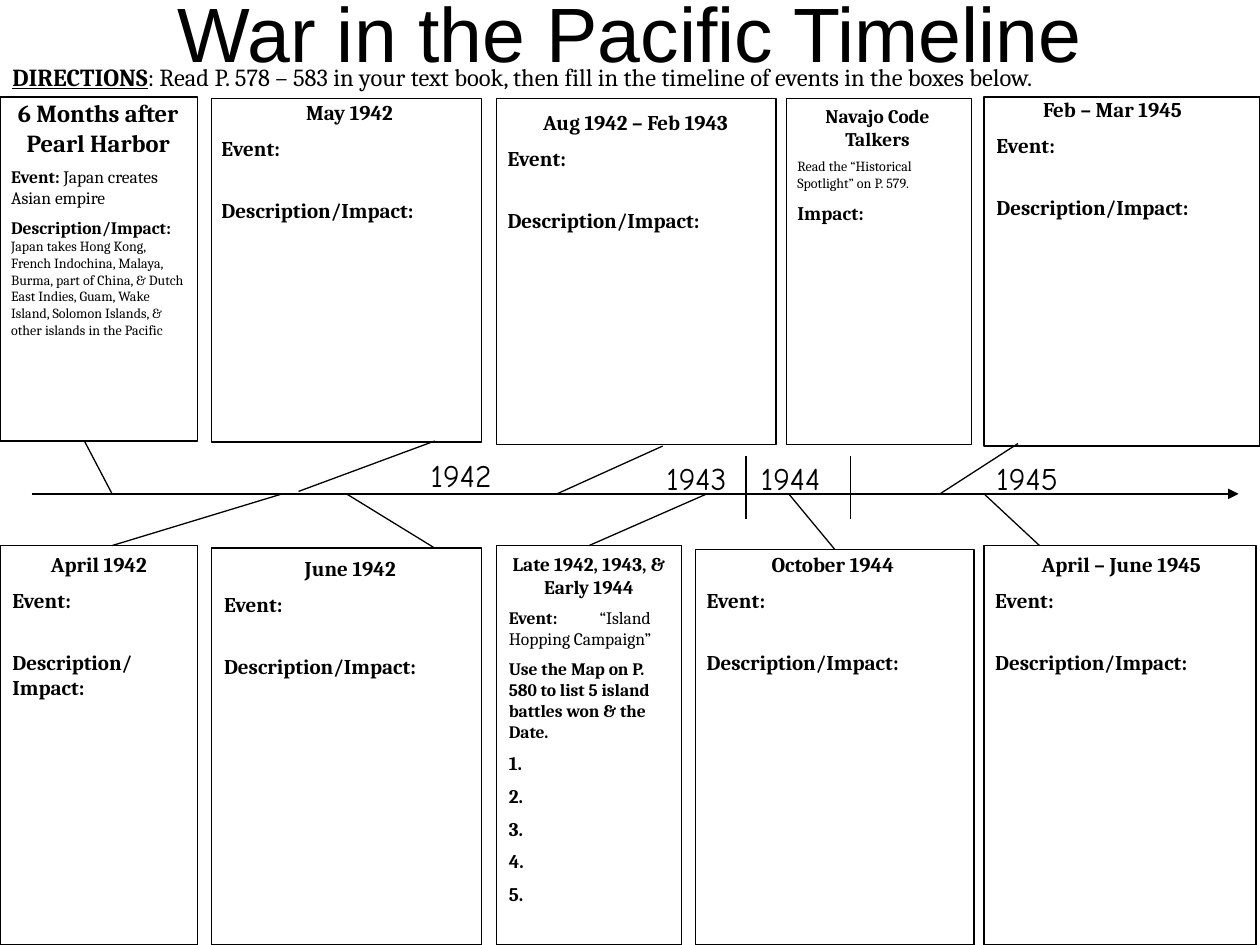
from pptx import Presentation
from pptx.dml.color import RGBColor
from pptx.enum.shapes import MSO_CONNECTOR, MSO_SHAPE
from pptx.enum.text import MSO_ANCHOR, MSO_AUTO_SIZE, PP_ALIGN
from pptx.oxml.ns import qn
from pptx.util import Inches, Pt
from lxml.etree import SubElement

THEME = dict(
    ink=RGBColor(0, 0, 0), paper=RGBColor(255, 255, 255), line=0.75,
    title=44, year=18, lead=14, head=12, label=11, body=10, small=8, gap=21,
    title_font="Arial", body_font="Cambria", year_font="Comic Neue",
)
LEAD, HEAD, LABEL, BODY, SMALL = (THEME[n] for n in ("lead", "head", "label", "body", "small"))
AXIS_Y = 3.92

TITLE = "War in the Pacific Timeline"
DIRECTIONS = [
    ("DIRECTIONS", LEAD, True),
    (": Read P. 578 – 583 in your text book, then fill in the timeline of events in the boxes below.", LEAD, False),
]
PEARL_HARBOR = [
    [("6 Months after Pearl Harbor", LEAD, True)],
    [("Event: ", BODY, True), ("Japan creates Asian empire", BODY, False)],
    [("Description/Impact: ", BODY, True),
     ("Japan takes Hong Kong, French Indochina, Malaya, Burma, part of China, & Dutch East Indies, "
      "Guam, Wake Island, Solomon Islands, & other islands in the Pacific", SMALL, False)],
]
ISLAND_HOPPING = [
    [("Late 1942, 1943, & Early 1944", LABEL, True)],
    [("Event:\t", BODY, True), ("“Island Hopping Campaign”", BODY, False)],
    [("Use the Map on P. 580 to list 5 island battles won & the Date.", BODY, True)],
] + [[(f"{n}.", LABEL, True)] for n in range(1, 6)]
NAVAJO = [
    [("Navajo Code Talkers", LABEL, True)],
    [("Read the “Historical Spotlight” on P. 579.", SMALL, False)],
    [("Impact:", LABEL, True)],
]


def blank_event(date, impact="Description/Impact:"):
    return [[(t, HEAD, True)] for t in (date, "Event:", impact)]


CARDS = {
    "pearl": ((0, 0.77, 1.57, 2.73), (-0.01, 0.73, 1.58, 2.32), PEARL_HARBOR),
    "april42": ((0, 4.33, 1.57, 3.17), (0, 4.33, 1.57, 1.34), blank_event("April 1942", "Description/ Impact:")),
    "may42": ((1.68, 0.78, 2.14, 2.73), (1.66, 0.74, 2.23, 1.14), blank_event("May 1942")),
    "june42": ((1.68, 4.35, 2.14, 3.15), (1.68, 4.36, 2.2, 1.14), blank_event("June 1942")),
    "aug42": ((3.94, 0.78, 2.22, 2.75), (3.93, 0.82, 2.23, 1.14), blank_event("Aug 1942 – Feb 1943")),
    "october44": ((5.52, 4.36, 2.21, 3.14), (5.51, 4.33, 2.2, 1.14), blank_event("October 1944")),
    "feb45": ((7.81, 0.77, 2.19, 2.77), (7.81, 0.72, 2.04, 1.14), blank_event("Feb – Mar 1945")),
    "april45": ((7.81, 4.33, 2.16, 3.17), (7.8, 4.33, 2.2, 1.14), blank_event("April – June 1945")),
    "islands": ((3.94, 4.33, 1.47, 3.17), (3.94, 4.33, 1.47, 3.21), ISLAND_HOPPING),
    "navajo": ((6.24, 0.78, 1.47, 2.75), (6.23, 0.78, 1.47, 1.13), NAVAJO),
}
YEARS = [("1942", 3.32, 3.57), ("1943", 5.19, 3.59), ("1944", 5.94, 3.59), ("1945", 7.81, 3.59)]
YEAR_TICKS = [5.92, 6.75]
LEADERS = [
    (0.89, AXIS_Y, 0.67, 3.5, None), (2.24, AXIS_Y, 0.89, 4.33, None),
    (2.37, 3.9, 3.45, 3.5, None), (2.75, AXIS_Y, 3.45, 4.35, None),
    (4.42, AXIS_Y, 5.26, 3.54, None), (5.61, AXIS_Y, 4.68, 4.33, "islands"),
    (6.26, AXIS_Y, 6.62, 4.36, "october44"), (7.46, AXIS_Y, 8.08, 3.52, None),
    (7.81, AXIS_Y, 8.25, 4.33, None),
]


def add_text(s, box, paragraphs, font, centered=False):
    tb = s.shapes.add_textbox(*map(Inches, box))
    tf = tb.text_frame
    tf.word_wrap = True
    tf.auto_size = MSO_AUTO_SIZE.SHAPE_TO_FIT_TEXT
    for i, runs in enumerate(paragraphs):
        p = tf.paragraphs[0] if i == 0 else tf.add_paragraph()
        if "\t" in runs[0][0]:
            tabs = SubElement(p._p.get_or_add_pPr(), qn("a:tabLst"))
            SubElement(tabs, qn("a:tab"), pos=str(Inches(0.72)), algn="l")
        if i == 0 and centered:
            p.alignment = PP_ALIGN.CENTER
        if i:
            opens_space = runs[0][0].startswith("Description") and runs[0][1] == HEAD
            p.space_before = Pt(THEME["gap"] if opens_space else runs[0][1] / 2)
        p.font.name = font
        p.font.color.rgb = THEME["ink"]
        sizes, weights = {r[1] for r in runs}, {r[2] for r in runs}
        if len(sizes) == 1:
            p.font.size = Pt(runs[0][1])
        if len(weights) == 1:
            p.font.bold = runs[0][2]
        for text, size, bold in runs:
            r = p.add_run()
            r.text = text
            if len(sizes) > 1:
                r.font.size = Pt(size)
            if len(weights) > 1:
                r.font.bold = bold
    return tf


def add_card(s, box):
    sp = s.shapes.add_shape(MSO_SHAPE.RECTANGLE, *map(Inches, box))
    sp.shadow.inherit = False
    sp.fill.solid()
    sp.fill.fore_color.rgb = THEME["paper"]
    sp.line.color.rgb = THEME["ink"]
    sp.line.width = Pt(THEME["line"])
    return sp


def add_line(s, x1, y1, x2, y2, target=None, arrow=False):
    cx = s.shapes.add_connector(MSO_CONNECTOR.STRAIGHT, *map(Inches, (x1, y1, x2, y2)))
    cx.line.color.rgb = THEME["ink"]
    cx.line.width = Pt(THEME["line"])
    if arrow:
        SubElement(cx.line._get_or_add_ln(), qn("a:tailEnd"), type="triangle")
    SubElement(cx._element.spPr, qn("a:effectLst"))
    if target is not None:
        cx.end_connect(target, 0)


def main():
    prs = Presentation()
    prs.slide_width, prs.slide_height = Inches(10), Inches(7.5)
    s = prs.slides.add_slide(prs.slide_layouts[6])

    tf = add_text(s, (0, 0, 10, 0.51), [[(TITLE, THEME["title"], False)]], THEME["title_font"], True)
    tf.auto_size = MSO_AUTO_SIZE.NONE
    tf.vertical_anchor = MSO_ANCHOR.MIDDLE
    tf = add_text(s, (0, 0.44, 10, 0.34), [DIRECTIONS], THEME["body_font"])
    tf.paragraphs[0].runs[0].font.underline = True

    add_line(s, 0.25, AXIS_Y, 9.83, AXIS_Y, arrow=True)
    rects = {}
    for name, (box, text_box, paragraphs) in CARDS.items():
        rects[name] = add_card(s, box)
        add_text(s, text_box, paragraphs, THEME["body_font"], True)
    for *ends, name in LEADERS:
        add_line(s, *ends, target=rects.get(name))
    for x in YEAR_TICKS:
        add_line(s, x, 3.62, x, 4.12)
    for year, x, y in YEARS:
        add_text(s, (x, y, 1, 0.4), [[(year, THEME["year"], False)]], THEME["year_font"])

    prs.save("out.pptx")


if __name__ == "__main__":
    main()
